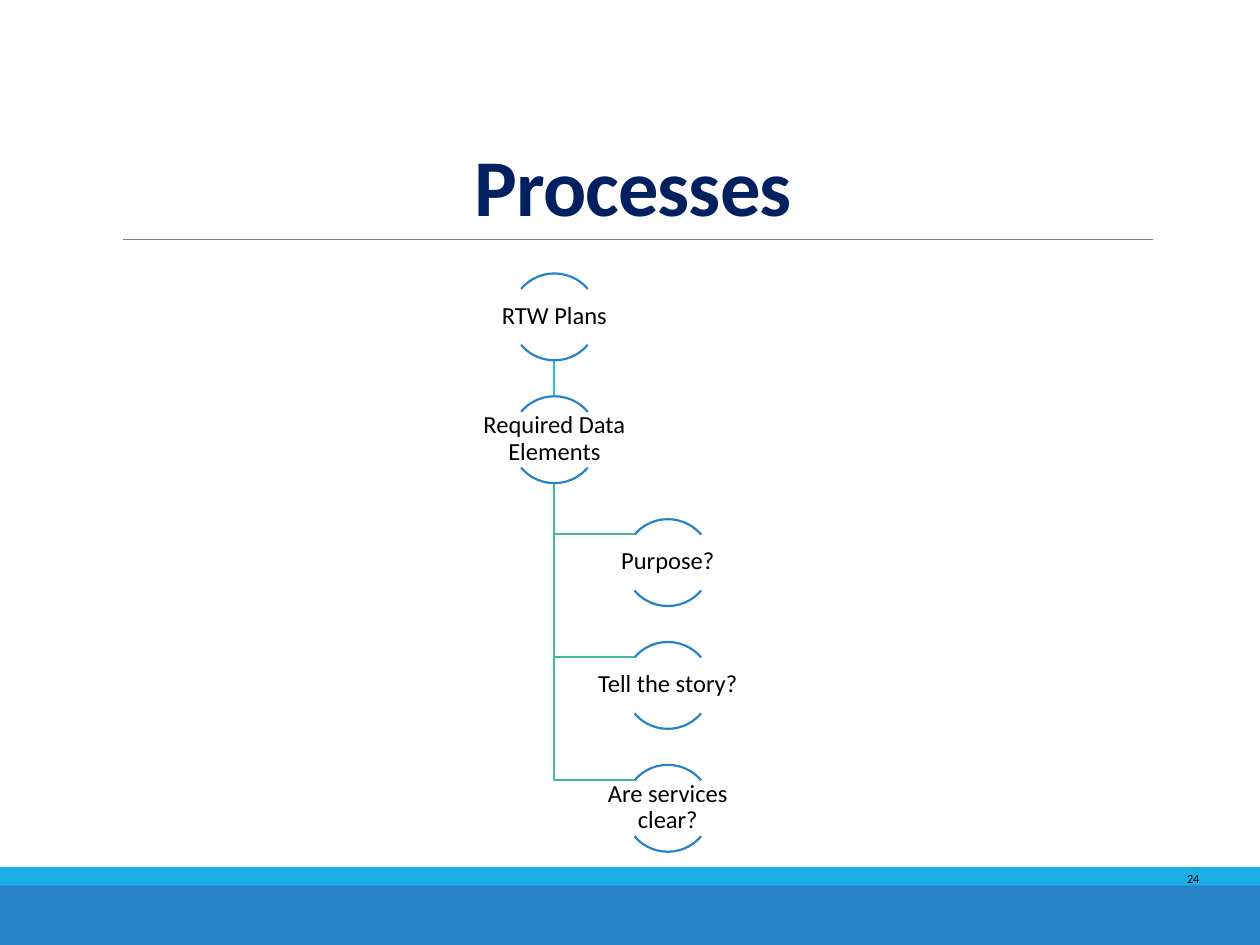
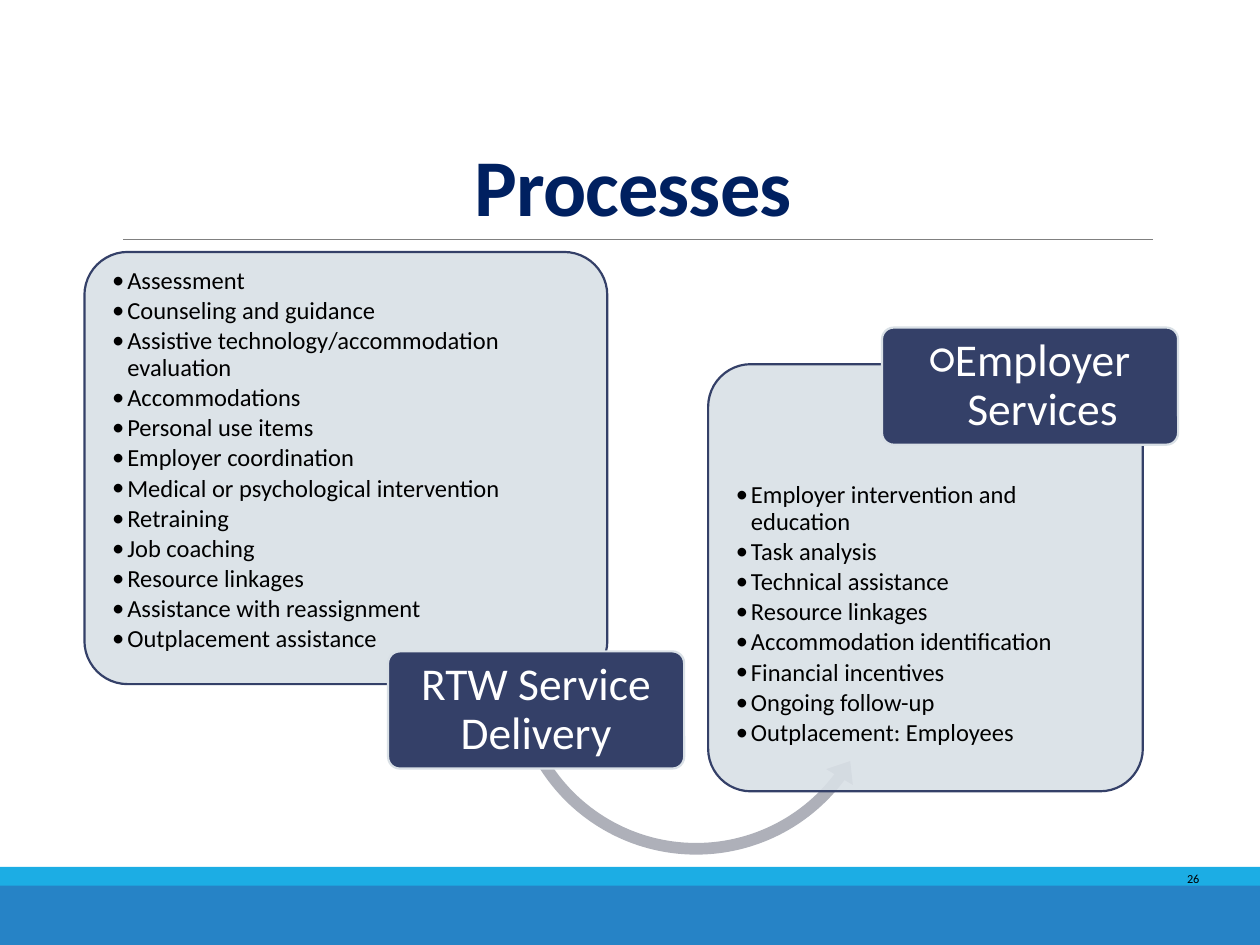
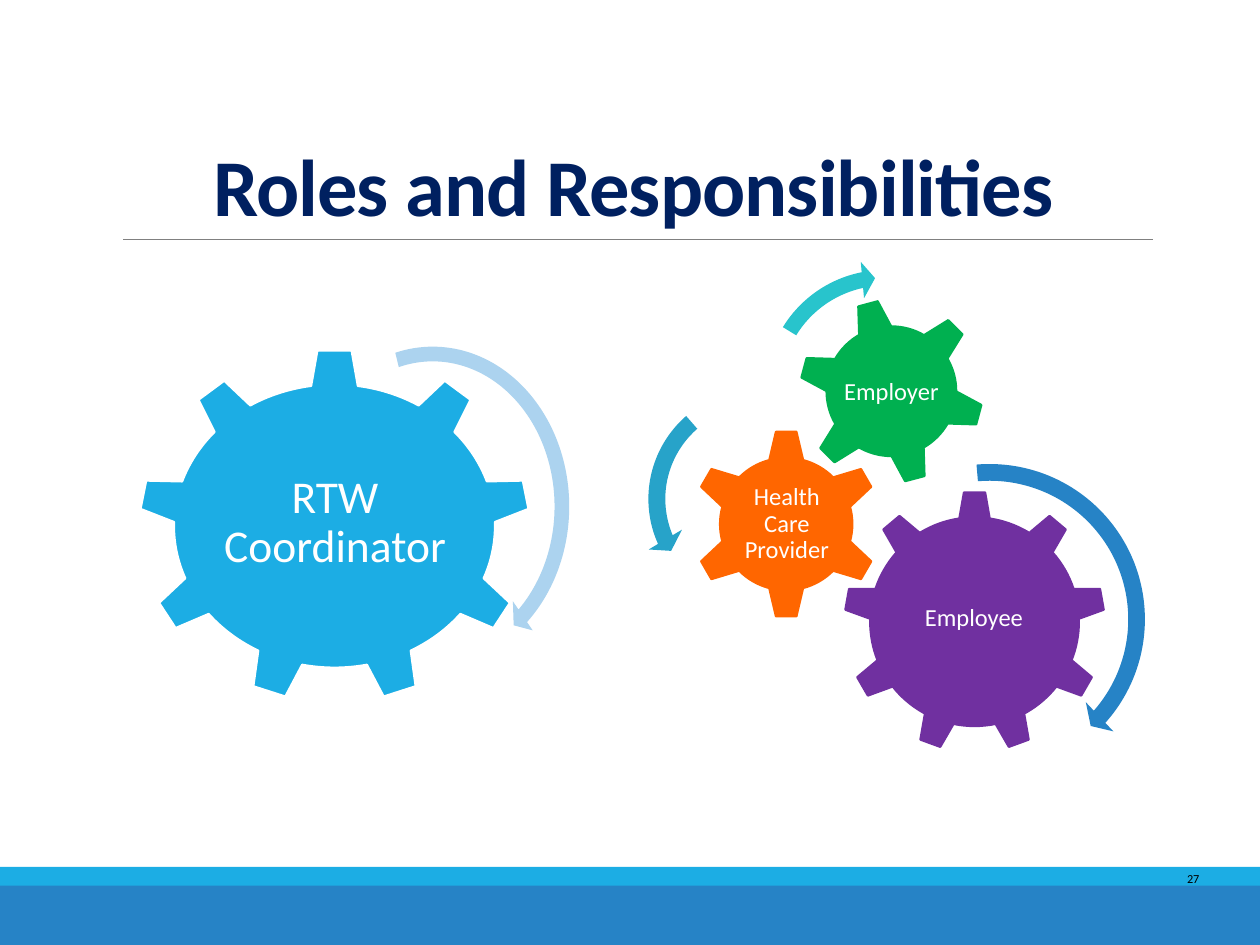
import lxml.etree
import pptx
import pptx.dml.color
import pptx.enum.shapes
import pptx.enum.text
import pptx.oxml.ns
import pptx.util

Inches = pptx.util.Inches
Pt = pptx.util.Pt
qn = pptx.oxml.ns.qn
SHAPE = pptx.enum.shapes.MSO_SHAPE
ALIGN = pptx.enum.text.PP_ALIGN
ANCHOR = pptx.enum.text.MSO_ANCHOR

FONT = "Calibri"
COLORS = {
    "black": "000000", "white": "FFFFFF", "title": "002060", "rule": "808080",
    "blue": "2683C6", "sky": "1CADE4", "aqua": "28C4CC", "teal": "27A3C9",
    "mint": "42BA97", "navy": "344068", "pale": "D9E0E6", "gray": "AEB0B9",
    "light": "ACD3EF", "purple": "7030A0", "orange": "FF6600", "green": "00B050",
}
TITLE_ONLY, TWO_CONTENT = 5, 3


def rgb(name):
    return pptx.dml.color.RGBColor.from_string(COLORS[name])


def write(tf, text, size=14, color="black", bold=False, align=ALIGN.CENTER, anchor=ANCHOR.MIDDLE,
          inset=(0, 0, 0, 0), leading=0.9, after=0, level=0, bullet=None, hang=0, spacing=None):
    """Fill a text frame, one paragraph per line of text."""
    tf.word_wrap = True
    tf.auto_size = pptx.enum.text.MSO_AUTO_SIZE.NONE
    tf.vertical_anchor = anchor
    tf.margin_left, tf.margin_top, tf.margin_right, tf.margin_bottom = map(Inches, inset)
    for i, line in enumerate(text.split("\n")):
        p = tf.add_paragraph() if i else tf.paragraphs[0]
        p.alignment, p.level, p.line_spacing = align, level, leading
        p.space_before, p.space_after = Pt(0), Pt(after)
        r = p.add_run()
        r.text = line
        r.font.name, r.font.size, r.font.bold = FONT, Pt(size), bold
        r.font.color.rgb = rgb(color)
        if spacing:
            r._r.get_or_add_rPr().set("spc", str(spacing))
        if bullet:
            pPr = p._p.get_or_add_pPr()
            pPr.set("marL", str(Inches(hang)))
            pPr.set("indent", str(-Inches(hang)))
            lxml.etree.SubElement(pPr, qn("a:buFont")).set("typeface", FONT)
            lxml.etree.SubElement(pPr, qn("a:buChar")).set("char", bullet)


class Deck:
    def __init__(self):
        self.prs = pptx.Presentation()
        self.prs.slide_width, self.prs.slide_height = Inches(10), Inches(7.5)
        self.s = None

    def slide(self, title, number, layout=TITLE_ONLY):
        self.s = self.prs.slides.add_slide(self.prs.slide_layouts[layout])
        # Bands, rule and slide number
        self.shape(SHAPE.RECTANGLE, 0, 7, 10, 0.5, fill="blue")
        self.shape(SHAPE.RECTANGLE, 0, 6.88, 10, 0.15, fill="sky")
        self.line(0.98, 1.9, 9.15, 1.9, "rule", 0.5)
        self.text(str(number), 9.15, 6.86, 0.64, 0.23, size=7, leading=1)
        # Title
        self.placeholder(0, title, 0.9, 0.31, 8.25, 1.59, size=46, color="title", bold=True,
                         anchor=ANCHOR.BOTTOM, inset=(0.1, 0.05, 0.1, 0.05), leading=0.85, spacing=-50)

    def placeholder(self, index, text, x, y, w, h, **fmt):
        ph = self.s.placeholders[index]
        ph.left, ph.top, ph.width, ph.height = map(Inches, (x, y, w, h))
        write(ph.text_frame, text, **fmt)
        ph._element.getparent().append(ph._element)  # bring to front

    def bullets(self, index, items, x, y, w, h, top=0.14):
        self.placeholder(index, "\n".join(items), x, y, w, h, align=ALIGN.LEFT, anchor=ANCHOR.TOP,
                         inset=(0.14, top, 0.14, 0.14), after=2.1, level=1, bullet="•", hang=0.12)

    def style(self, sp, fill=None, line=None, alpha=None):
        sp.shadow.inherit = False
        if fill:
            sp.fill.solid()
            sp.fill.fore_color.rgb = rgb(fill)
            if alpha:
                clr = sp._element.spPr.find(".//" + qn("a:srgbClr"))
                lxml.etree.SubElement(clr, qn("a:alpha")).set("val", str(alpha * 1000))
        else:
            sp.fill.background()
        if line:
            sp.line.color.rgb = rgb(line)
            sp.line.width = Pt(1.25)
        else:
            sp.line.fill.background()

    def shape(self, kind, x, y, w, h, adj=(), rot=0, **look):
        sp = self.s.shapes.add_shape(kind, *map(Inches, (x, y, w, h)))
        for i, value in enumerate(adj):
            sp.adjustments[i] = value
        sp.rotation = rot
        self.style(sp, **look)
        return sp

    def line(self, x1, y1, x2, y2, color, width=1.25):
        c = self.s.shapes.add_connector(pptx.enum.shapes.MSO_CONNECTOR.STRAIGHT,
                                        *map(Inches, (x1, y1, x2, y2)))
        c.line.color.rgb = rgb(color)
        c.line.width = Pt(width)
        lxml.etree.SubElement(c._element.spPr, qn("a:effectLst"))

    def elbow(self, x, y, x2, y2, color):
        fb = self.s.shapes.build_freeform(Inches(x), Inches(y))
        fb.add_line_segments([(Inches(x), Inches(y2)), (Inches(x2), Inches(y2))], close=False)
        self.style(fb.convert_to_shape(), line=color)

    def text(self, text, x, y, w, h, **fmt):
        tb = self.s.shapes.add_textbox(*map(Inches, (x, y, w, h)))
        write(tb.text_frame, text, **fmt)

    def node(self, text, cx, top, size=0.69):
        """Text between an upper and a lower arc of one circle."""
        for adj in ((132, 192), (24, 84)):
            self.shape(SHAPE.ARC, cx - size / 2, top, size, size, adj, line="blue")
        self.text(text, cx - size, top + 0.12, 2 * size, 0.44, inset=(0.01,) * 4)

    def panel(self, x, y, w, h):
        self.shape(SHAPE.ROUNDED_RECTANGLE, x, y, w, h, (0.1,), fill="pale", line="navy", alpha=90)

    def card(self, text, x, y, **fmt):
        sp = self.shape(SHAPE.ROUNDED_RECTANGLE, x, y, 2.35, 0.93, (0.1,), fill="navy", line="pale")
        write(sp.text_frame, text, size=26, color="white", inset=(0.05, 0.04, 0.05, 0.04), **fmt)

    def gear(self, kind, text, box, text_box, fill, line=None, rot=0, size=14):
        self.shape(kind, *box, rot=rot, fill=fill, line=line or fill)
        self.text(text, *text_box, size=size, color="white", inset=(0.02,) * 4)


def processes_tree(d):
    d.slide("Processes", 24)
    trunk_x, branch_x, first, pitch = 4.4, 5.3, 2.17, 3.9 / 4
    nodes = [("RTW Plans", trunk_x), ("Required Data Elements", trunk_x),
             ("Purpose?", branch_x), ("Tell the story?", branch_x), ("Are services clear?", branch_x)]
    tops = [first + pitch * i for i in range(len(nodes))]
    # Links
    for top in reversed(tops[2:]):
        d.elbow(trunk_x, 3.83, 5.03, top + 0.12, "mint")
    d.line(trunk_x, 2.85, trunk_x, 3.14, "aqua")
    # Nodes
    for (text, cx), top in zip(nodes, tops):
        d.node(text, cx, top)


def processes_services(d):
    d.slide("Processes", 26, TWO_CONTENT)
    # Service delivery
    d.panel(0.67, 2, 4.15, 3.43)
    d.bullets(1, ["Assessment", "Counseling and guidance",
                  "Assistive technology/accommodation evaluation", "Accommodations",
                  "Personal use items", "Employer coordination",
                  "Medical or psychological intervention", "Retraining", "Job coaching",
                  "Resource linkages", "Assistance with reassignment", "Outplacement assistance"],
              0.75, 2.08, 3.99, 2.54, top=0.05)
    d.shape(SHAPE.LEFT_CIRCULAR_ARROW, 3.98, 3.77, 3.09, 3.09,
            (0.03, 3.69, 22.09, 90.9, 0.04), fill="gray")
    d.card("RTW Service Delivery", 3.08, 5.17)
    # Employer services
    d.panel(5.62, 2.89, 3.45, 3.39)
    d.bullets(2, ["Employer intervention and education", "Task analysis", "Technical assistance",
                  "Resource linkages", "Accommodation identification", "Financial incentives",
                  "Ongoing follow-up", "Outplacement: Employees"],
              5.7, 3.69, 3.29, 2.51)
    d.card("Employer Services", 7, 2.6, bullet="○", hang=0.2)


def roles(d):
    d.slide("Roles and Responsibilities", 27)
    # Coordinator
    d.gear(SHAPE.GEAR_9, "RTW Coordinator", (1.1, 2.77, 3.11, 2.81), (1.71, 3.43, 1.9, 1.45),
           "sky", line="white", size=26)
    d.shape(SHAPE.CIRCULAR_ARROW, 2.27, 2.67, 2.33, 2.7,
            (0.05, 3.13, 30.32, 153.79, 0.06), fill="light")
    # Partners
    d.gear(SHAPE.GEAR_9, "Employee", (6.7, 3.9, 2.07, 2.07), (7.11, 4.38, 1.24, 1.06), "purple")
    d.gear(SHAPE.GEAR_6, "Health Care Provider", (5.49, 3.41, 1.5, 1.5), (5.87, 3.79, 0.75, 0.74),
           "orange")
    d.gear(SHAPE.GEAR_6, "Employer", (6.34, 2.37, 1.47, 1.47), (6.66, 2.7, 0.83, 0.83),
           "green", rot=345)
    # Turning arrows
    d.shape(SHAPE.CIRCULAR_ARROW, 6.53, 3.59, 2.65, 2.65,
            (0.05, 2.99, 24.95, 159.08, 0.06), fill="blue")
    d.shape(SHAPE.LEFT_CIRCULAR_ARROW, 5.06, 3, 1.92, 1.92,
            (0.07, 4.3, 104.89, 148.38, 0.08), rot=341.6, fill="teal")
    d.shape(SHAPE.CIRCULAR_ARROW, 5.99, 2.06, 2.07, 2.07,
            (0.06, 3.94, 133.14, 105.08, 0.07), rot=36.4, fill="aqua")


def main():
    d = Deck()
    processes_tree(d)
    processes_services(d)
    roles(d)
    d.prs.save("out.pptx")


if __name__ == "__main__":
    main()
